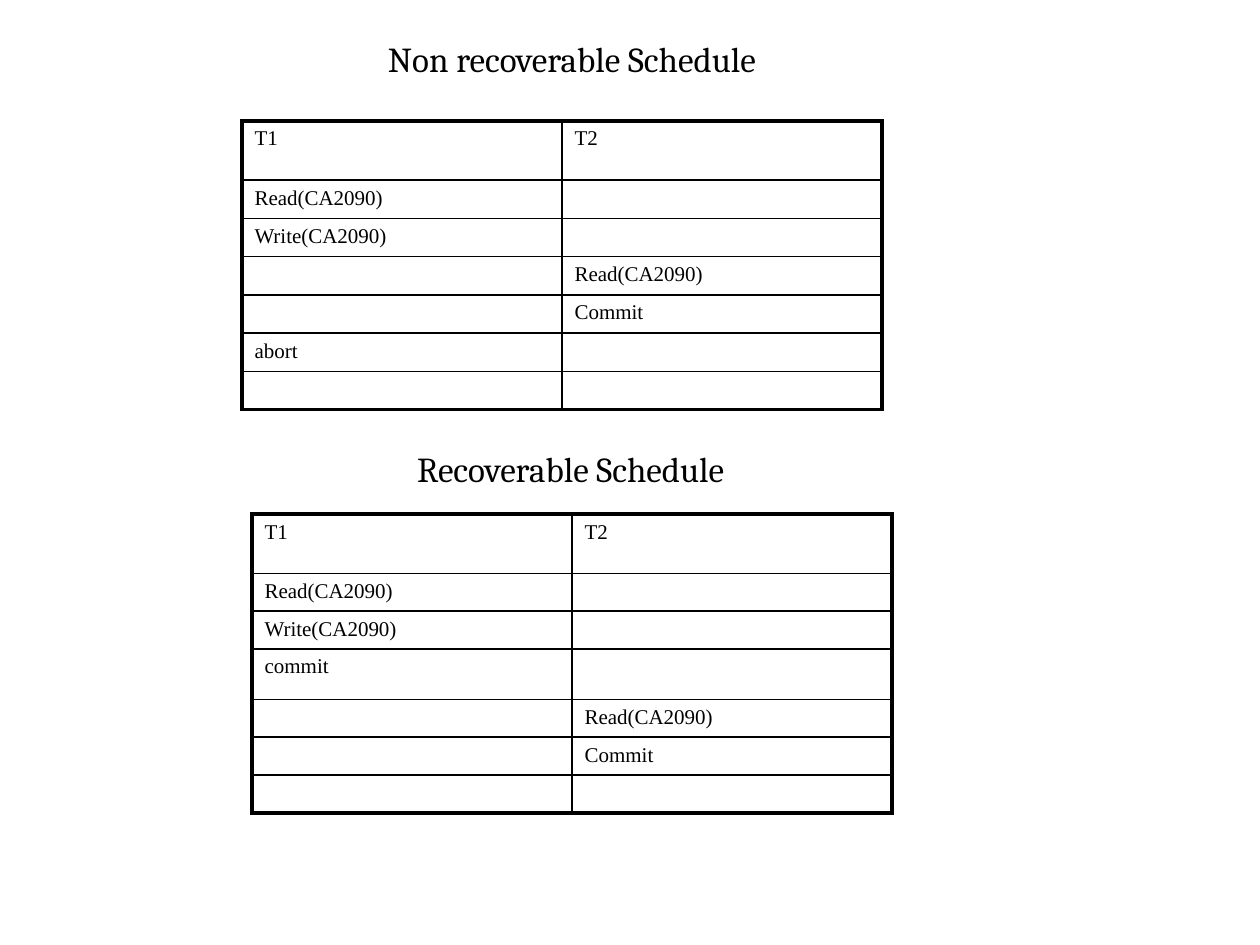
from dataclasses import dataclass

from lxml import etree
from pptx import Presentation
from pptx import util as u
from pptx.dml.color import RGBColor
from pptx.enum import text
from pptx.oxml.ns import qn


@dataclass(frozen=True)
class Theme:
    ink: str = "000000"
    heading_font: str = "Cambria"
    heading_size: int = 20
    body_font: str = "Times New Roman"
    body_size: int = 12
    outer_line: float = 2.25
    inner_line: float = 1


class ScheduleSlide:
    def __init__(self, slide, theme):
        self.slide = slide
        self.theme = theme

    def add_words(self, paragraph, words, font, size):
        run = paragraph.add_run()
        run.text = words
        for name, value in {"name": font, "size": u.Pt(size)}.items():
            setattr(run.font, name, value)
        run.font.color.rgb = RGBColor.from_string(self.theme.ink)

    def heading(self, words, left, top):
        box = self.slide.shapes.add_textbox(
            u.Inches(left), u.Inches(top), u.Inches(3.92), u.Inches(0.44))
        frame = box.text_frame
        layout = {"word_wrap": True, "auto_size": text.MSO_AUTO_SIZE.SHAPE_TO_FIT_TEXT}
        for name, value in layout.items():
            setattr(frame, name, value)
        line = frame.paragraphs[0]
        line.alignment = text.PP_ALIGN.CENTER
        self.add_words(line, words, self.theme.heading_font, self.theme.heading_size)

    def border(self, cell, side, points):
        line = etree.SubElement(cell._tc.get_or_add_tcPr(), qn(f"a:ln{side}"),
                                w=str(u.Pt(points)))
        fill = etree.SubElement(line, qn("a:solidFill"))
        etree.SubElement(fill, qn("a:srgbClr"), val=self.theme.ink)

    def cell(self, cell, words):
        line = cell.text_frame.paragraphs[0]
        if words:
            self.add_words(line, words, self.theme.body_font, self.theme.body_size)
        else:
            # Keeps an empty cell as low as a filled one
            etree.SubElement(line._p, qn("a:endParaRPr"),
                             sz=str(self.theme.body_size * 100))

    def schedule(self, steps, heights, left, top):
        """Draw one row per step, with a thick outer frame and thin inner rules."""
        column_width = 2.54
        last_row, last_column = len(steps) - 1, len(steps[0]) - 1
        table = self.slide.shapes.add_table(
            len(steps), len(steps[0]), u.Inches(left), u.Inches(top),
            u.Inches(column_width * len(steps[0])), u.Inches(sum(heights))).table
        for flag in ("first_row", "horz_banding"):
            setattr(table, flag, False)
        for column in table.columns:
            column.width = u.Inches(column_width)
        for r, (step, height) in enumerate(zip(steps, heights)):
            table.rows[r].height = u.Inches(height)
            for c, words in enumerate(step):
                cell = table.cell(r, c)
                self.cell(cell, words)
                outer_sides = {"L": c == 0, "R": c == last_column,
                               "T": r == 0, "B": r == last_row}
                for side, outer in outer_sides.items():
                    self.border(cell, side, self.theme.outer_line if outer
                                else self.theme.inner_line)
                cell.fill.background()


def main():
    deck = Presentation()
    deck.slide_width, deck.slide_height = u.Inches(10), u.Inches(7.5)
    page = ScheduleSlide(deck.slides.add_slide(deck.slide_layouts[6]), Theme())

    read_step, write_step = "Read(CA2090)", "Write(CA2090)"
    opening = [("T1", "T2"), (read_step, ""), (write_step, "")]
    second_transaction = [("", read_step), ("", "Commit")]
    blank = ("", "")
    header, row, commit_row = 0.47, 0.3, 0.4

    page.schedule(opening + second_transaction + [("abort", ""), blank],
                  [header] + [row] * 6, 1.92, 0.96)
    page.heading("Non recoverable Schedule", 2.58, 0.25)
    page.heading("Recoverable Schedule", 2.57, 3.5)
    page.schedule(opening + [("commit", "")] + second_transaction + [blank],
                  [header, row, row, commit_row] + [row] * 3, 2, 4.08)

    deck.save("out.pptx")


if __name__ == "__main__":
    main()
